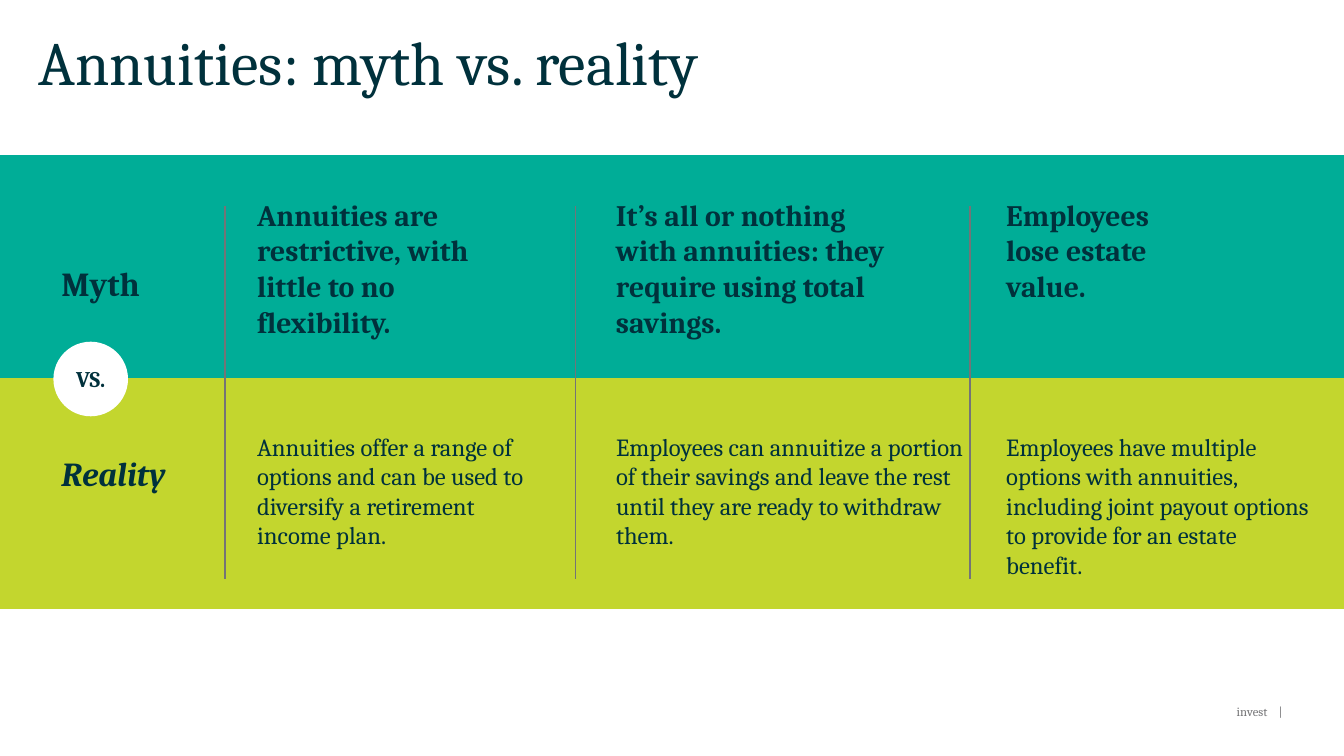
import pptx
import pptx.util
import pptx.dml.color
import pptx.enum.shapes
import pptx.enum.text
import pptx.oxml

PX = 9144  # 100 px to the inch
FONT = "Cambria"
INK, GREY, WHITE = "00313C", "747476", "FFFFFF"
TEAL, LIME = "00AD97", "C3D62E"
SHAPE = pptx.enum.shapes.MSO_SHAPE
ALIGN = pptx.enum.text.PP_ALIGN
ANCHOR = pptx.enum.text.MSO_ANCHOR

WIDTH, HEIGHT = 1333, 750
MYTH = (0, 154, WIDTH, 221)
REAL = (0, 375, WIDTH, 229)

# left, myth width, reality width, myth, reality
CLAIMS = [
    (255, 221, 284,
     "Annuities are restrictive, with little to no flexibility.",
     "Annuities offer a range of options and can be used to "
     "diversify a retirement income plan."),
    (611, 294, 351,
     "It’s all or nothing with annuities: they require using total savings.",
     "Employees can annuitize a portion of their savings and leave "
     "the rest until they are ready to withdraw them."),
    (998, 200, 301,
     "Employees lose estate value.",
     "Employees have multiple options with annuities, including joint "
     "payout options to provide for an estate benefit."),
]
RULES = [223, 571, 962]


def px(*vals):
    return [pptx.util.Emu(val * PX) for val in vals]


def color(code):
    return pptx.dml.color.RGBColor.from_string(code)


def style(shape, text, size, ink=INK, bold=False, italic=False,
          align=ALIGN.LEFT, anchor=ANCHOR.TOP):
    """Put one formatted paragraph in a shape without insets."""
    frame = shape.text_frame
    frame.text = text
    frame.word_wrap = True
    frame.auto_size = pptx.enum.text.MSO_AUTO_SIZE.NONE
    frame.vertical_anchor = anchor
    frame.margin_left = frame.margin_right = 0
    frame.margin_top = frame.margin_bottom = 0
    para = frame.paragraphs[0]
    para.alignment = align
    font = para.runs[0].font
    font.name, font.size = FONT, pptx.util.Pt(size)
    font.bold, font.italic = bold, italic
    font.color.rgb = color(ink)
    return para


def label(slide, box, text, size, **look):
    return style(slide.shapes.add_textbox(*px(*box)), text, size, **look)


def block(slide, kind, box, fill):
    shape = slide.shapes.add_shape(kind, *px(*box))
    shape.shadow.inherit = False
    shape.fill.solid()
    shape.fill.fore_color.rgb = color(fill)
    shape.line.fill.background()
    return shape


def title(slide, box, text):
    shape = slide.shapes.title
    shape.left, shape.top, shape.width, shape.height = px(*box)
    style(shape, text, 44).line_spacing = 0.9


def band(slide, box, fill, name, drop, italic=False):
    """Draw a full-width band with its row name, drop px below its top."""
    block(slide, SHAPE.RECTANGLE, box, fill)
    left, top = box[:2]
    label(slide, (left + 61, top + drop, 132, 52), name, 24,
          bold=True, italic=italic)


def claim(slide, left, wide, broad, myth, real):
    """Write one column: the myth above, the reality below."""
    top = label(slide, (left, MYTH[1] + 41, wide, 104), myth, 21.2, bold=True)
    low = label(slide, (left, REAL[1] + 53, broad, 140), real, 17.6)
    for para in (top, low):
        para.space_after = pptx.util.Pt(5.3)


def rule(slide, x, top, end):
    line = slide.shapes.add_connector(
        pptx.enum.shapes.MSO_CONNECTOR.STRAIGHT, *px(x, top, x, end))
    line.line.color.rgb = color(GREY)
    line.line.width = pptx.util.Pt(1)
    line._element.spPr.append(pptx.oxml.parse_xml(
        '<a:effectLst xmlns:a='
        '"http://schemas.openxmlformats.org/drawingml/2006/main"/>'))


def badge(slide, box, text):
    shape = block(slide, SHAPE.OVAL, box, WHITE)
    style(shape, text, 16, bold=True, align=ALIGN.CENTER,
          anchor=ANCHOR.MIDDLE)


def footer(slide, box, text):
    label(slide, box, text, 9, ink=GREY, align=ALIGN.RIGHT)


def main():
    deck = pptx.Presentation()
    deck.slide_width, deck.slide_height = px(WIDTH, HEIGHT)
    slide = deck.slides.add_slide(deck.slide_layouts[5])
    title(slide, (38, 32, 1260, 134), "Annuities: myth vs. reality")
    band(slide, MYTH, TEAL, "Myth", 107)
    band(slide, REAL, LIME, "Reality", 74, italic=True)
    for item in CLAIMS:
        claim(slide, *item)
    for x in RULES:
        rule(slide, x, MYTH[1] + 50, REAL[1] + 199)
    badge(slide, (53, 339, 74, 74), "VS.")
    footer(slide, (1191, 698, 81, 20), "invest    |")
    deck.save("out.pptx")


if __name__ == "__main__":
    main()
